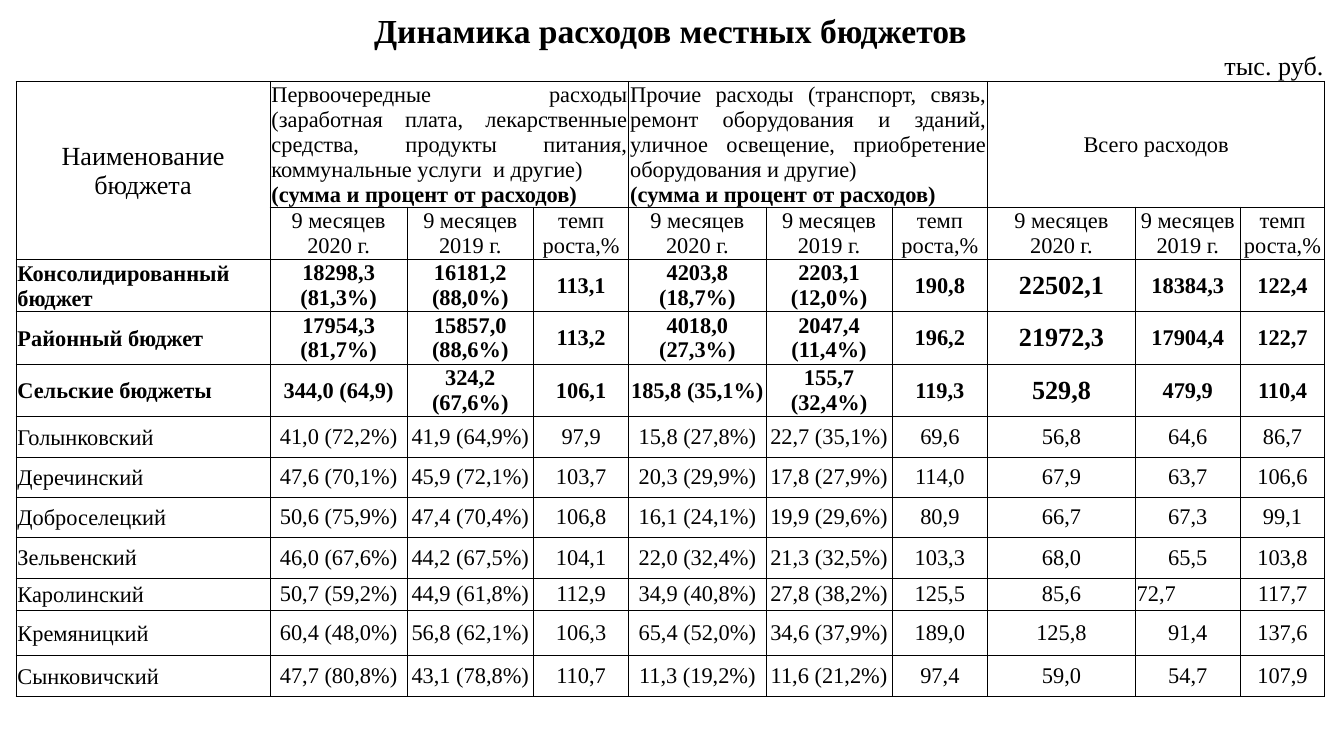
from dataclasses import dataclass

from lxml.etree import SubElement
from pptx import Presentation
from pptx.dml.color import RGBColor
from pptx.enum.text import MSO_ANCHOR, PP_ALIGN
from pptx.oxml import parse_xml
from pptx.oxml.ns import nsdecls, qn
from pptx.table import Table, _Cell
from pptx.util import Inches, Pt

COLORS = {"ink": "000000"}
FONT = "Times New Roman"
LEFT, MID, RIGHT, FULL = PP_ALIGN.LEFT, PP_ALIGN.CENTER, PP_ALIGN.RIGHT, PP_ALIGN.JUSTIFY

# Table grid in inches; rows grow to fit their text
GROUP = [1.02, 0.94, 0.71]
COLS = [1.89, *GROUP, *GROUP, 0.44, 0.66, 0.23, 0.55, 0.63]
ROWS = [0.32, 0, 0.47, 0.39] + [0.3] * 7 + [0.24, 0.34, 0.3]
STARTS = (0, 1, 2, 3, 4, 5, 6, 7, 9, 11)
WIDE = (7, 9)
TOTAL = 7
BODY = 4
BOLD_ROWS = 3


@dataclass
class Entry:
    row: int
    col: int
    text: str = ""
    size: float = 12
    bold: bool = False
    align: PP_ALIGN = MID
    across: int = 1
    down: int = 1
    anchor: MSO_ANCHOR = MSO_ANCHOR.MIDDLE
    bold_end: bool = False


SHARE = "\n(сумма и процент от расходов)"
FIRST = ("Первоочередные расходы (заработная плата, лекарственные средства, "
         "продукты питания, коммунальные услуги  и другие)")
OTHER = ("Прочие расходы (транспорт, связь, ремонт оборудования и зданий, "
         "уличное освещение, приобретение оборудования и другие)")
HEADS = [
    Entry(0, 0, "Динамика расходов местных бюджетов", 18, True,
          across=12, anchor=MSO_ANCHOR.BOTTOM),
    Entry(1, 0, across=8),
    Entry(1, 8, across=2),
    Entry(1, 10, "тыс. руб.", 14, align=RIGHT, across=2, anchor=MSO_ANCHOR.BOTTOM),
    Entry(2, 0, "Наименование бюджета", 14, down=2),
    Entry(2, 1, FIRST + SHARE, align=FULL, across=3, bold_end=True),
    Entry(2, 4, OTHER + SHARE, align=FULL, across=3, bold_end=True),
    Entry(2, 7, "Всего расходов", across=5),
]
NOW, PAST, PACE = "9 месяцев 2020 г.", "9 месяцев 2019 г.", "темп\nроста,%"
PERIODS = (NOW, PAST, PACE, NOW, PAST, PACE, "9 месяцев\n2020 г.", PAST, PACE)

BUDGETS = [
    ("Консолидированный бюджет", "18298,3 (81,3%)", "16181,2 (88,0%)", "113,1",
     "4203,8 (18,7%)", "2203,1 (12,0%)", "190,8", "22502,1", "18384,3", "122,4"),
    ("Районный бюджет", "17954,3 (81,7%)", "15857,0 (88,6%)", "113,2",
     "4018,0 (27,3%)", "2047,4 (11,4%)", "196,2", "21972,3", "17904,4", "122,7"),
    ("Сельские бюджеты", "344,0 (64,9)", "324,2 (67,6%)", "106,1",
     "185,8 (35,1%)", "155,7 (32,4%)", "119,3", "529,8", "479,9", "110,4"),
    ("Голынковский", "41,0 (72,2%)", "41,9 (64,9%)", "97,9",
     "15,8 (27,8%)", "22,7 (35,1%)", "69,6", "56,8", "64,6", "86,7"),
    ("Деречинский", "47,6 (70,1%)", "45,9 (72,1%)", "103,7",
     "20,3 (29,9%)", "17,8 (27,9%)", "114,0", "67,9", "63,7", "106,6"),
    ("Доброселецкий", "50,6 (75,9%)", "47,4 (70,4%)", "106,8",
     "16,1 (24,1%)", "19,9 (29,6%)", "80,9", "66,7", "67,3", "99,1"),
    ("Зельвенский", "46,0 (67,6%)", "44,2 (67,5%)", "104,1",
     "22,0 (32,4%)", "21,3 (32,5%)", "103,3", "68,0", "65,5", "103,8"),
    ("Каролинский", "50,7 (59,2%)", "44,9 (61,8%)", "112,9",
     "34,9 (40,8%)", "27,8 (38,2%)", "125,5", "85,6", "72,7", "117,7"),
    ("Кремяницкий", "60,4 (48,0%)", "56,8 (62,1%)", "106,3",
     "65,4 (52,0%)", "34,6 (37,9%)", "189,0", "125,8", "91,4", "137,6"),
    ("Сынковичский", "47,7 (80,8%)", "43,1 (78,8%)", "110,7",
     "11,3 (19,2%)", "11,6 (21,2%)", "97,4", "59,0", "54,7", "107,9"),
]


def set_edges(cell: _Cell, shown: str) -> None:
    """Draw the edges named in shown (L, R, T, B) and clear the rest."""
    for place, side in enumerate("LRTB"):
        paint = (f'<a:solidFill><a:srgbClr val="{COLORS["ink"]}"/></a:solidFill>'
                 if side in shown else "<a:noFill/>")
        line = parse_xml(f'<a:ln{side} {nsdecls("a")} w="{Pt(0.5)}">{paint}</a:ln{side}>')
        cell._tc.get_or_add_tcPr().insert(place, line)


def prepare(table: Table) -> None:
    """Clear fills, set margins and borders, and keep empty cells low."""
    for r in range(len(ROWS)):
        for c in range(len(COLS)):
            cell = table.cell(r, c)
            cell.fill.background()
            cell.margin_left = cell.margin_right = cell.margin_top = Inches(0.01)
            cell.margin_bottom = Inches(0.01 if r >= BODY and c else 0)
            set_edges(cell, {0: "", 1: "B"}.get(r, "LRTB"))
            end = SubElement(cell.text_frame.paragraphs[0]._p, qn("a:endParaRPr"))
            end.set("sz", "800")


def put(table: Table, item: Entry) -> None:
    cell = table.cell(item.row, item.col)
    if item.across > 1 or item.down > 1:
        cell.merge(table.cell(item.row + item.down - 1, item.col + item.across - 1))
    cell.vertical_anchor = item.anchor
    if not item.text:
        return
    cell.text_frame.text = item.text
    for n, para in enumerate(cell.text_frame.paragraphs):
        para.alignment = item.align
        for run in para.runs:
            run.font.name = FONT
            run.font.size = Pt(item.size)
            run.font.bold = item.bold or (item.bold_end and n > 0)
            run.font.color.rgb = RGBColor.from_string(COLORS["ink"])


def main() -> None:
    deck = Presentation()
    deck.slide_width, deck.slide_height = Inches(10), Inches(10 * 9 / 16)
    slide = deck.slides.add_slide(deck.slide_layouts[6])

    frame = slide.shapes.add_table(len(ROWS), len(COLS), Inches(0.12), Inches(0.06),
                                   Inches(9.76), Inches(5.34))
    table = frame.table
    table.first_row = table.horz_banding = False
    for col, width in zip(table.columns, COLS):
        col.width = Inches(width)
    for row, height in zip(table.rows, ROWS):
        row.height = Inches(height)
    frame.width, frame.height = Inches(9.76), Inches(5.34)
    prepare(table)

    # Title, unit and column heads
    for item in HEADS:
        put(table, item)
    for col, period in zip(STARTS[1:], PERIODS):
        put(table, Entry(3, col, period, across=2 if col in WIDE else 1))

    # Budget figures
    for n, budget in enumerate(BUDGETS):
        bold = n < BOLD_ROWS
        for col, text in zip(STARTS, budget):
            put(table, Entry(BODY + n, col, text, 14 if bold and col == TOTAL else 12, bold,
                             LEFT if col == 0 or text == "72,7" else MID,
                             across=2 if col in WIDE else 1))

    deck.save("out.pptx")


if __name__ == "__main__":
    main()
